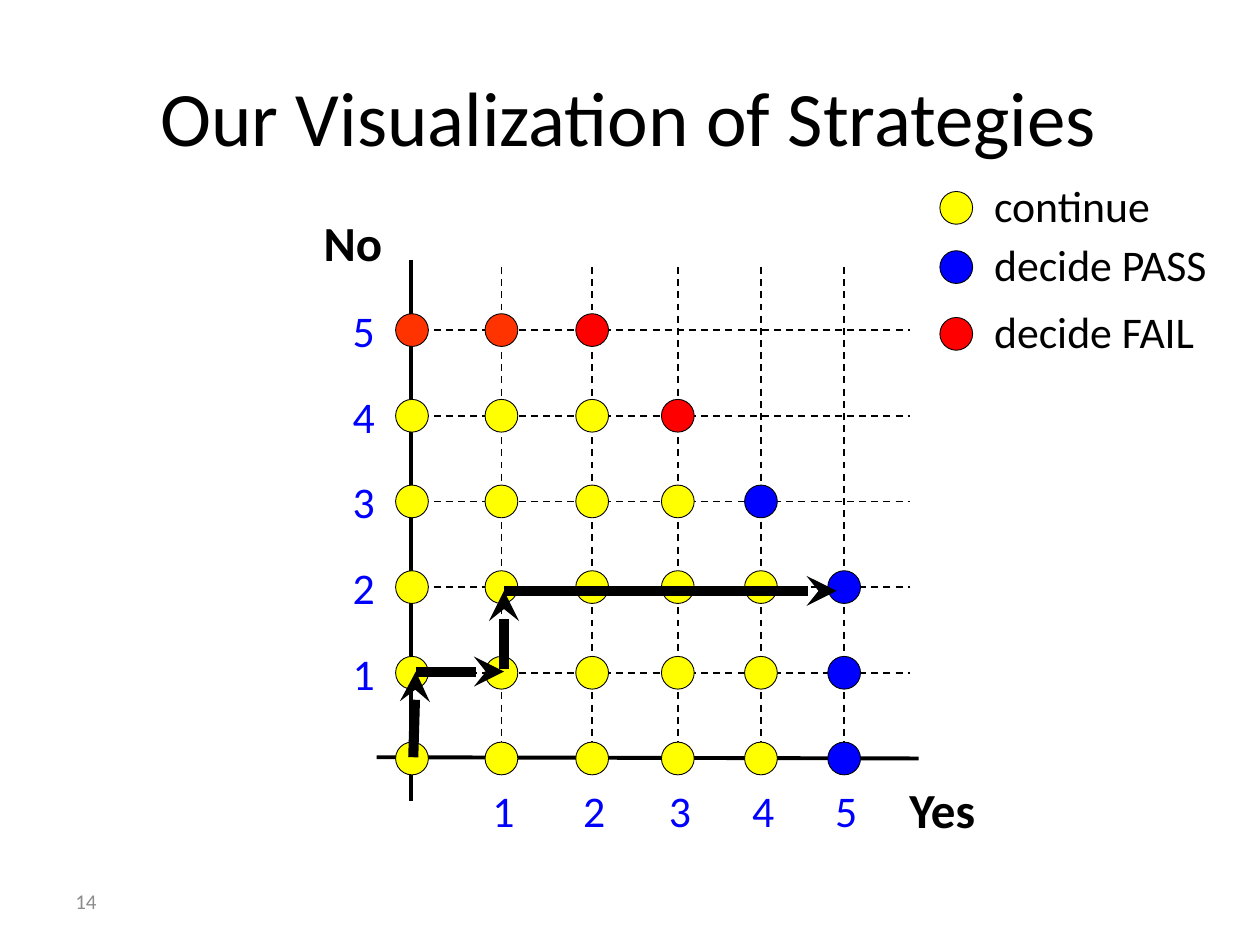
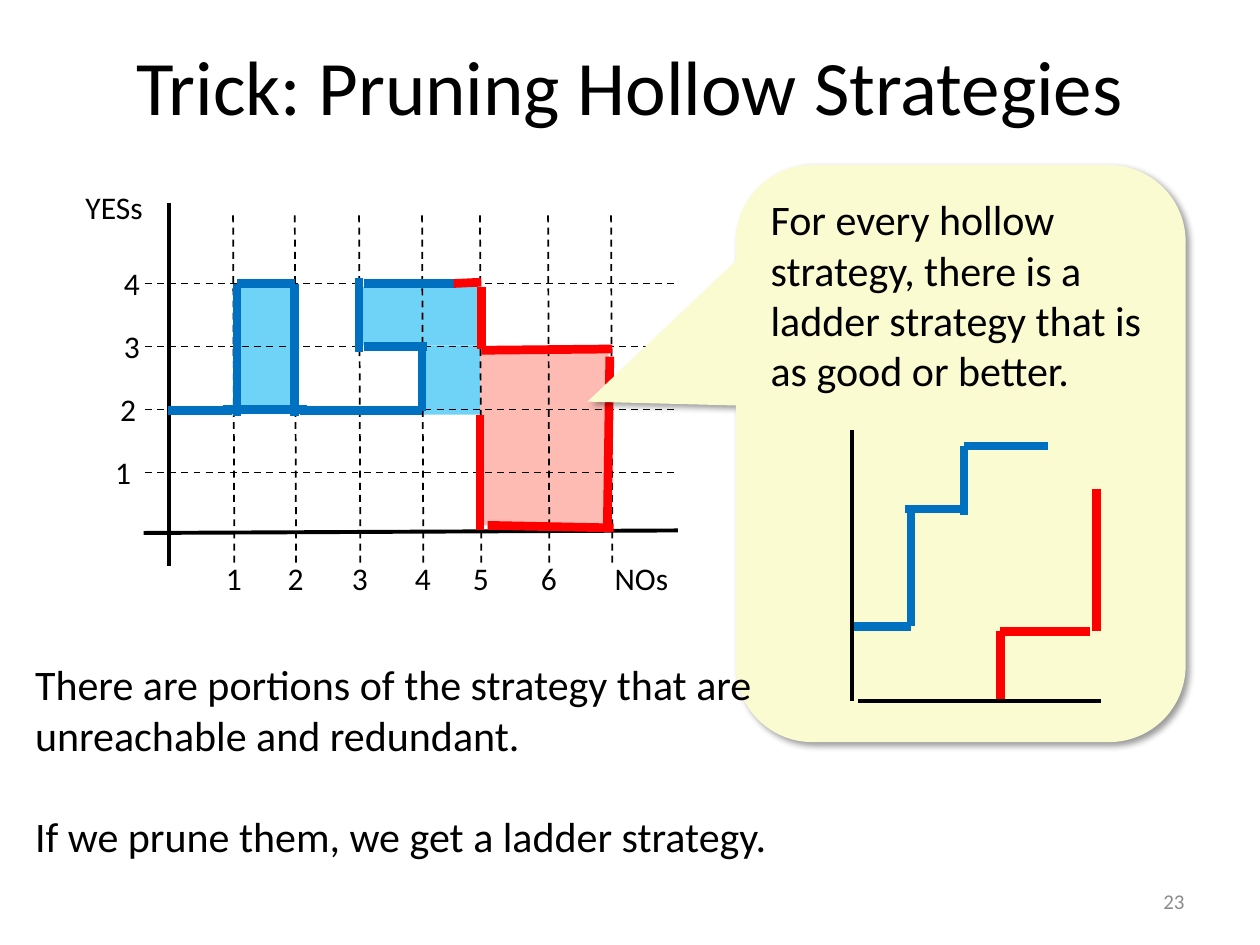
from lxml import etree
from pptx import Presentation
from pptx.dml.color import RGBColor
from pptx.enum.dml import MSO_LINE
from pptx.enum.shapes import MSO_CONNECTOR, MSO_SHAPE
from pptx.enum.text import MSO_ANCHOR, MSO_AUTO_SIZE, PP_ALIGN
from pptx.oxml.ns import qn
from pptx.util import Inches, Pt

LEFT, CENTER, RIGHT = PP_ALIGN.LEFT, PP_ALIGN.CENTER, PP_ALIGN.RIGHT
TOP, MIDDLE = MSO_ANCHOR.TOP, MSO_ANCHOR.MIDDLE
FONT = "Calibri"
COLORS = {
    "ink": "000000", "page_number": "8C8C8C", "axis_label": "0000FF",
    "continue": "FFFF00", "pass": "0000FF", "fail": "FF0000", "early_fail": "FF3300",
    "blue_path": "0070C0", "red_path": "FF0000",
    "blue_area": "6FD3F7", "red_area": "FEBBB4", "callout": "FBFBD1",
}

# Strategy grid: one string per count of No answers, one letter per count of Yes answers
DECISIONS = {"C": "continue", "P": "pass", "F": "fail", "E": "early_fail"}
STRATEGY = ["CCCCCP", "CCCCCP", "CCCCCP", "CCCCP", "CCCF", "EEF"]
YES_X = [3.27, 3.98, 4.7, 5.38, 6.04, 6.7]
NO_Y = [6.02 - 0.68 * count for count in range(6)]
DOT = 0.26
LEGEND = [("continue", "continue", 1.65), ("decide PASS", "pass", 2.12),
          ("decide FAIL", "fail", 2.65)]
WALK = [(3.28, 6.01, 3.3, 5.33), (3.3, 5.33, 4, 5.33),
        (4, 5.31, 4, 4.69), (4, 4.69, 6.64, 4.69)]

# Hollow strategy
NOS_X = [1.86, 2.35, 2.86, 3.36, 3.82, 4.36, 4.86]
YESS_Y = [3.75 - 0.5 * step for step in range(4)]
YESS_LABEL_X = [0.98, 1.02, 1.05, 1.05]
HOLLOW_AREAS = [
    ("blue_area", (3.35, 2.74, 0.46, 0.55)), ("red_area", (3.81, 2.78, 1.02, 1.39)),
    ("blue_area", (2.86, 2.28, 0.96, 0.46)), ("blue_area", (1.89, 2.28, 0.42, 0.98)),
]
HOLLOW_PATHS = {
    "blue_path": [
        (1.88, 3.3, 1.88, 2.25), (1.33, 3.26, 1.84, 3.26), (2.34, 3.3, 2.34, 2.25),
        (1.88, 2.25, 2.34, 2.25), (2.38, 3.26, 3.35, 3.26), (3.35, 3.26, 3.35, 2.75),
        (2.89, 2.75, 3.39, 2.75), (2.85, 2.79, 2.85, 2.21), (2.89, 2.25, 3.6, 2.25),
        (1.77, 3.25, 2.44, 3.25),
    ],
    "red_path": [
        (3.87, 4.17, 4.87, 4.19), (4.82, 4.21, 4.84, 2.83), (3.82, 2.78, 4.86, 2.77),
        (3.6, 2.25, 3.82, 2.24), (3.82, 2.77, 3.82, 2.28), (3.81, 4.21, 3.81, 3.29),
    ],
}
LADDER_PATHS = {
    "blue_path": [
        (6.76, 4.97, 7.23, 4.97), (7.23, 4.97, 7.23, 4.04), (7.18, 4.04, 7.65, 4.04),
        (7.65, 3.54, 7.65, 4.09), (7.65, 3.54, 8.32, 3.54),
    ],
    "red_path": [
        (7.94, 5.56, 7.94, 5.01), (7.94, 5.01, 8.65, 5.01), (8.7, 5.01, 8.7, 3.88),
    ],
}
LADDER_AXES = [(6.76, 3.41, 6.76, 5.56), (6.81, 5.56, 8.74, 5.56)]
CALLOUT = ("For every hollow strategy, there is a ladder strategy "
           "that is as good or better.")
CONCLUSIONS = ["There are portions of the strategy that are unreachable and redundant.",
               "If we prune them, we get a ladder strategy."]


def rgb(name):
    return RGBColor.from_string(COLORS[name])


def inches(lengths):
    return [Inches(length) for length in lengths]


def format_text(frame, size, color="ink", bold=False, align=LEFT):
    for paragraph in frame.paragraphs:
        paragraph.alignment = align
        for run in paragraph.runs:
            run.font.name, run.font.size, run.font.bold = FONT, Pt(size), bold
            run.font.color.rgb = rgb(color)


def add_text(slide, text, box, size, color="ink", bold=False, align=LEFT,
             anchor=TOP, wrap=False, margins=(0.1, 0.05)):
    frame = slide.shapes.add_textbox(*inches(box)).text_frame
    frame.word_wrap = wrap
    frame.auto_size = MSO_AUTO_SIZE.SHAPE_TO_FIT_TEXT if anchor == TOP else MSO_AUTO_SIZE.NONE
    frame.vertical_anchor = anchor
    frame.margin_left = frame.margin_right = Inches(margins[0])
    frame.margin_top = frame.margin_bottom = Inches(margins[1])
    frame.text = text
    format_text(frame, size, color, bold, align)
    return frame


def add_tick_label(slide, number, x, y, size, color="ink"):
    """Write a number centred on the point (x, y)."""
    width, height = (0.38, 0.52) if size > 20 else (0.33, 0.4)
    add_text(slide, str(number), (x - width / 2, y - height / 2, width, height), size, color)


def add_line(slide, ends, width, color="ink", dashed=False, arrow=False):
    connector = slide.shapes.add_connector(MSO_CONNECTOR.STRAIGHT, *inches(ends))
    connector.line.color.rgb = rgb(color)
    connector.line.width = Pt(width)
    if dashed:
        connector.line.dash_style = MSO_LINE.DASH
    properties = connector._element.spPr
    if arrow:
        etree.SubElement(properties.find(qn("a:ln")), qn("a:tailEnd"), type="stealth")
    etree.SubElement(properties, qn("a:effectLst"))


def add_paths(slide, paths):
    for color, segments in paths.items():
        for ends in segments:
            add_line(slide, ends, 5, color)


def add_filled(slide, kind, box, color, outline=None):
    shape = slide.shapes.add_shape(kind, *inches(box))
    shape.shadow.inherit = False
    shape.fill.solid()
    shape.fill.fore_color.rgb = rgb(color)
    if outline:
        shape.line.color.rgb = rgb("ink")
        shape.line.width = Pt(outline)
    else:
        shape.line.fill.background()
    return shape


def add_dot(slide, x, y, decision):
    add_filled(slide, MSO_SHAPE.OVAL, (x - DOT / 2, y - DOT / 2, DOT, DOT), decision, 0.5)


def add_slide(prs, title, title_box, number, number_left, number_align):
    slide = prs.slides.add_slide(prs.slide_layouts[5])
    heading = slide.shapes.title
    heading.left, heading.top, heading.width, heading.height = inches(title_box)
    heading.text_frame.text = title
    heading.text_frame.vertical_anchor = MIDDLE
    format_text(heading.text_frame, 44, align=CENTER)
    add_text(slide, number, (number_left, 6.95, 2.33, 0.4), 12, "page_number",
             align=number_align, anchor=MIDDLE, wrap=True)
    return slide


def build_visualization(prs):
    slide = add_slide(prs, "Our Visualization of Strategies", (0.49, 0.29, 9, 1.25),
                      "14", 0.5, LEFT)
    add_line(slide, (3.26, 2.06, 3.26, 6.36), 2.25)
    add_line(slide, (2.99, 6.01, 7.29, 6.02), 2.25)
    for count in range(1, 6):
        x, y = YES_X[count], NO_Y[count]
        add_line(slide, (x, 2.12, x, 6.06), 1, dashed=True)
        add_line(slide, (3.25, y, 7.22, y), 1, dashed=True)
        add_tick_label(slide, count, x + 0.02, 6.43, 25, "axis_label")
        add_tick_label(slide, count, 2.89, y, 25, "axis_label")
    add_text(slide, "Yes", (7.12, 6.14, 0.77, 0.57), 28, bold=True)
    add_text(slide, "No", (2.47, 1.64, 0.67, 0.57), 28, bold=True)

    for y, decisions in zip(NO_Y, STRATEGY):
        for x, letter in zip(YES_X, decisions):
            add_dot(slide, x, y, DECISIONS[letter])
    for label, decision, y in LEGEND:
        add_text(slide, label, (7.75, y - 0.3, 2, 0.56), 25, margins=(0.14, 0.07))
        add_dot(slide, 7.59, y, decision)
    for ends in WALK:
        add_line(slide, ends, 5.75, arrow=True)


def add_callout(slide):
    callout = add_filled(slide, MSO_SHAPE.ROUNDED_RECTANGULAR_CALLOUT,
                         (5.84, 1.31, 3.57, 4.58), "callout")
    for index, value in enumerate((-0.83, -0.09, 0.17)):
        callout.adjustments[index] = value
    shadow = etree.SubElement(
        callout._element.spPr.find(qn("a:effectLst")), qn("a:outerShdw"),
        blurRad=str(Pt(4)), dist=str(Pt(3)), dir="2700000", algn="tl", rotWithShape="0")
    shade = etree.SubElement(shadow, qn("a:srgbClr"), val=COLORS["ink"])
    etree.SubElement(shade, qn("a:alpha"), val="40000")
    callout.text_frame.text = CALLOUT
    callout.text_frame.word_wrap = True
    callout.text_frame.vertical_anchor = TOP
    format_text(callout.text_frame, 24)


def build_pruning(prs):
    slide = add_slide(prs, "Trick: Pruning Hollow Strategies", (0.5, 0.15, 9, 1.05),
                      "23", 7.17, RIGHT)
    for color, box in HOLLOW_AREAS:
        add_filled(slide, MSO_SHAPE.RECTANGLE, box, color)
    add_line(slide, (1.34, 1.61, 1.34, 4.49), 2.25)
    add_line(slide, (1.14, 4.23, 5.38, 4.21), 2.25)
    for x in NOS_X:
        add_line(slide, (x - 0.01, 1.71, x, 4.49), 1, dashed=True)
    for number, x in enumerate(NOS_X[:-1], 1):
        add_tick_label(slide, number, x, 4.59, 18)
    for number, (x, y) in enumerate(zip(YESS_LABEL_X, YESS_Y), 1):
        add_line(slide, (1.15, y, 5.38, y), 1, dashed=True)
        add_tick_label(slide, number, x, y, 18)
    add_text(slide, "NOs", (4.78, 4.39, 0.82, 0.51), 18)
    add_text(slide, "YESs", (0.58, 1.44, 0.97, 0.5), 18)
    add_paths(slide, HOLLOW_PATHS)

    add_callout(slide)
    add_paths(slide, LADDER_PATHS)
    for ends in LADDER_AXES:
        add_line(slide, ends, 2.25)
    conclusions = add_text(slide, "\n".join(CONCLUSIONS), (0.18, 5.18, 6.02, 2.12), 24,
                           wrap=True)
    conclusions.paragraphs[0].space_after = Pt(29)


def main():
    prs = Presentation()
    prs.slide_width, prs.slide_height = Inches(10), Inches(7.5)
    build_visualization(prs)
    build_pruning(prs)
    prs.save("out.pptx")


if __name__ == "__main__":
    main()
